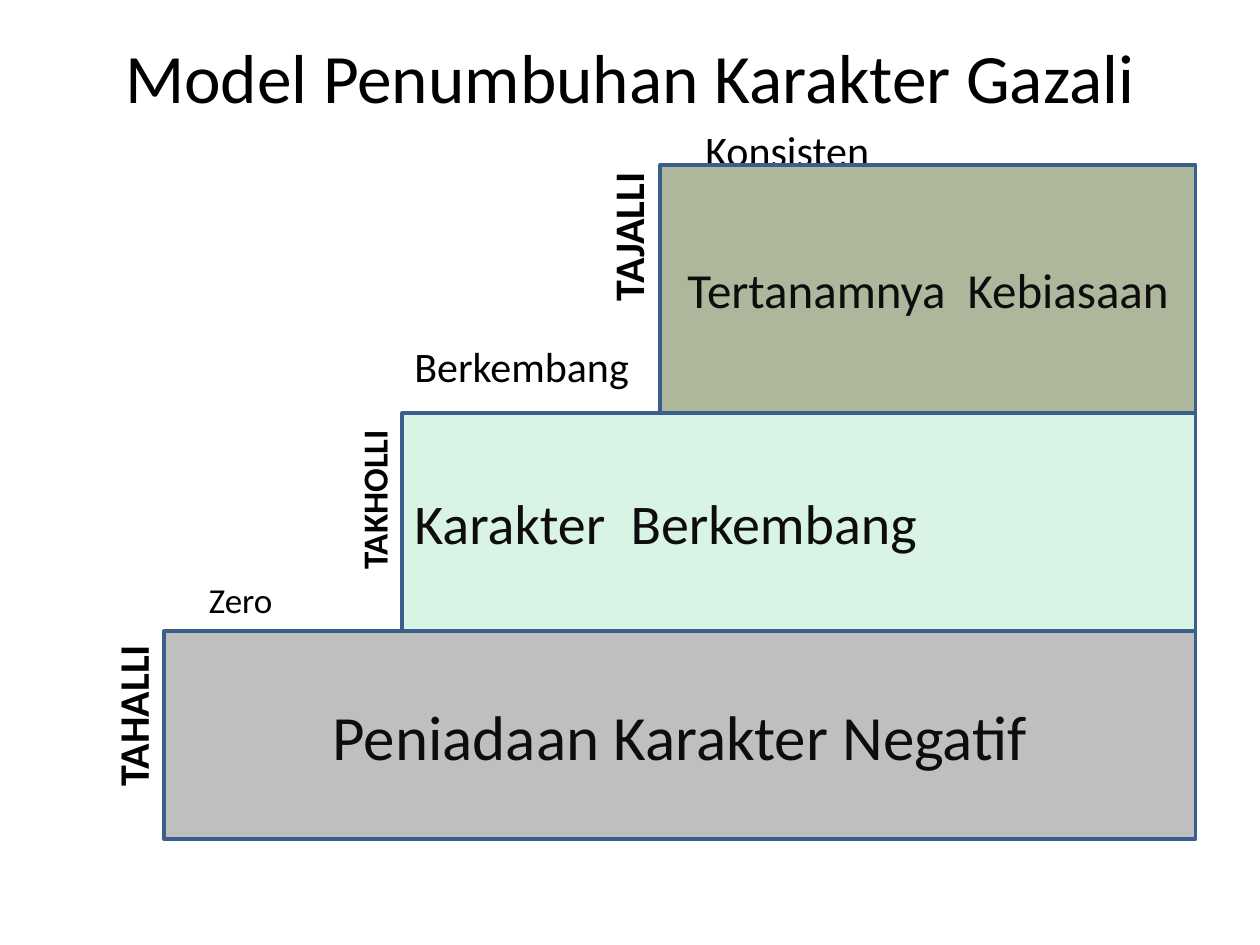
from dataclasses import dataclass

from lxml.etree import SubElement
from pptx import Presentation
from pptx.dml.color import RGBColor
from pptx.enum.shapes import MSO_SHAPE
from pptx.enum.text import MSO_ANCHOR, PP_ALIGN
from pptx.oxml.ns import qn
from pptx.util import Inches, Pt


@dataclass(frozen=True)
class Theme:
    """Colours and type sizes of the slide."""
    font: str = "Calibri"
    text: str = "000000"
    step_text: str = "0D0D0D"
    outline: str = "3A5F8C"
    grey: str = "BFBFBF"
    green: str = "00B050"
    olive: str = "4F6228"
    title: float = 39.6
    huge: int = 36
    large: int = 32
    medium: int = 28
    label: int = 24
    small: int = 20


THEME = Theme()
RIGHT_EDGE = 9.49


def write_text(shape, text, size, color=THEME.text, bold=False,
               align=PP_ALIGN.LEFT, anchor=MSO_ANCHOR.TOP, wrap=True):
    """Write one formatted line of text into a shape."""
    frame = shape.text_frame
    frame.word_wrap = wrap
    frame.vertical_anchor = anchor
    para = frame.paragraphs[0]
    para.alignment = align
    span = para.add_run()
    span.text = text
    span.font.name = THEME.font
    span.font.size = Pt(size)
    span.font.bold = bold
    span.font.color.rgb = RGBColor.from_string(color)


def add_label(page, text, left, top, width, height, size, rotation=0, **style):
    """Add a text box, turned by rotation degrees."""
    box = page.shapes.add_textbox(
        Inches(left), Inches(top), Inches(width), Inches(height))
    box.rotation = rotation
    write_text(box, text, size, **style)


def add_step(page, text, left, top, height, fill, opacity, size, align):
    """Add one stair block that reaches the common right edge."""
    block = page.shapes.add_shape(
        MSO_SHAPE.RECTANGLE, Inches(left), Inches(top),
        Inches(RIGHT_EDGE - left), Inches(height))
    block.shadow.inherit = False
    block.fill.solid()
    block.fill.fore_color.rgb = RGBColor.from_string(fill)
    if opacity < 100:
        color = block.fill._xPr.find(qn("a:solidFill"))[0]
        SubElement(color, qn("a:alpha")).set("val", str(opacity * 1000))
    block.line.color.rgb = RGBColor.from_string(THEME.outline)
    block.line.width = Pt(2)
    write_text(block, text, size, color=THEME.step_text, align=align,
               anchor=MSO_ANCHOR.MIDDLE)


def main():
    """Build the stair model slide and save it."""
    deck = Presentation()
    deck.slide_width, deck.slide_height = Inches(10), Inches(7.5)
    page = deck.slides.add_slide(deck.slide_layouts[6])

    add_label(page, "Model Penumbuhan Karakter Gazali", 0.5, 0.3, 9, 0.61,
              THEME.title, align=PP_ALIGN.CENTER, anchor=MSO_ANCHOR.MIDDLE)

    levels = [
        ("Konsisten", 5.5, 0.94, THEME.label),
        ("Berkembang", 3.19, 2.65, THEME.label),
        ("Zero", 1.56, 4.54, THEME.small),
    ]
    for text, left, top, size in levels:
        add_label(page, text, left, top, 2, 0.5, size, wrap=False)

    steps = [
        ("Peniadaan Karakter Negatif", 1.3, 5.01, 1.65,
         THEME.grey, 100, THEME.huge, PP_ALIGN.CENTER),
        ("Karakter  Berkembang", 3.19, 3.28, 1.73,
         THEME.green, 15, THEME.large, PP_ALIGN.LEFT),
        ("Tertanamnya  Kebiasaan", 5.24, 1.31, 1.97,
         THEME.olive, 46, THEME.medium, PP_ALIGN.CENTER),
    ]
    for step in steps:
        add_step(page, *step)

    stages = [
        ("TAHALLI", 0.38, 5.42, 0.5, THEME.label),
        ("TAKHOLLI", 2.3, 3.73, 0.44, THEME.small),
        ("TAJALLI", 4.31, 1.57, 0.5, THEME.label),
    ]
    for text, left, top, height, size in stages:
        add_label(page, text, left, top, 1.34, height, size,
                  rotation=270, bold=True)

    deck.save("out.pptx")


if __name__ == "__main__":
    main()
